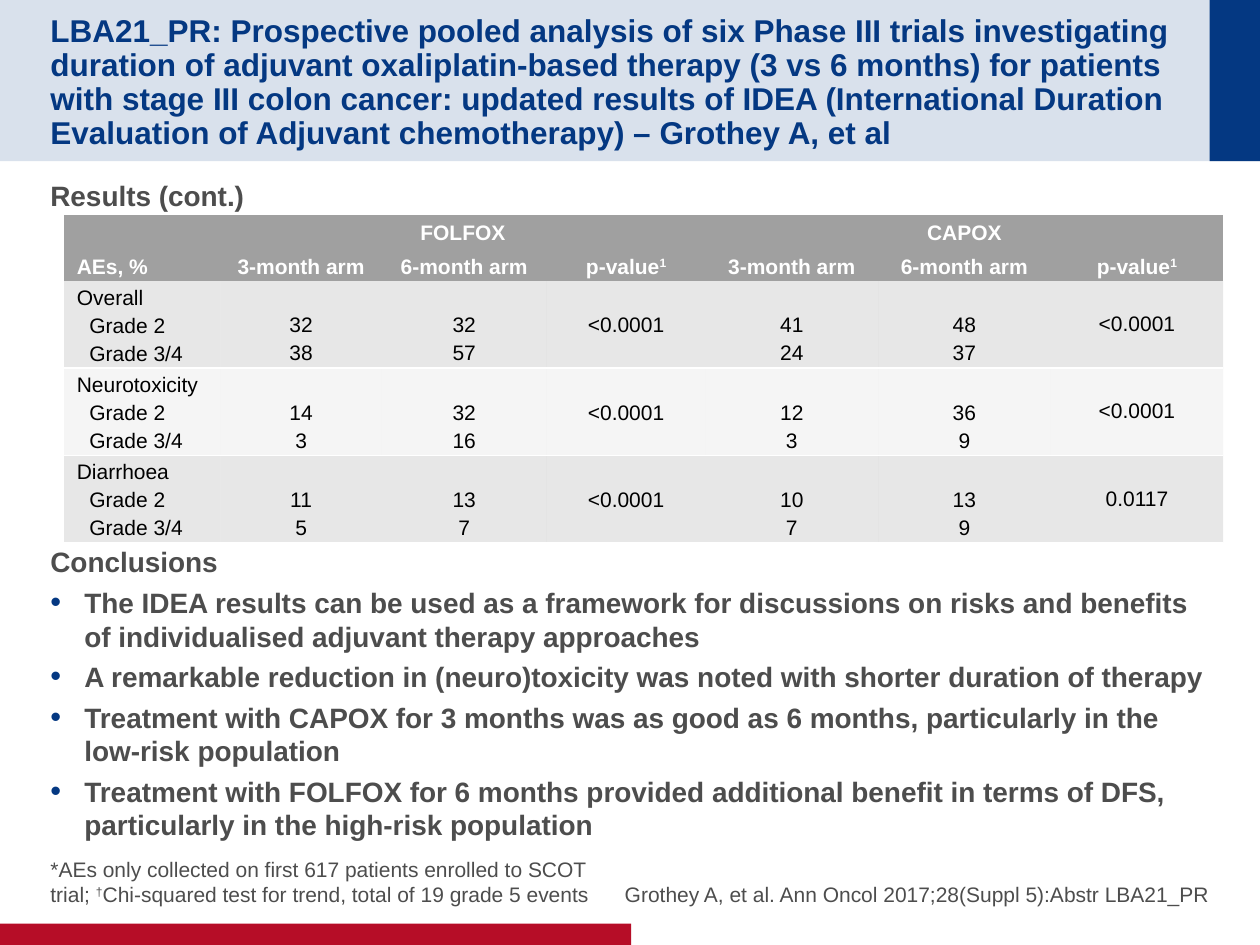
from lxml import etree
from pptx import Presentation
from pptx.dml.color import RGBColor
from pptx.enum.shapes import MSO_SHAPE as SHAPE
from pptx.enum.text import MSO_ANCHOR as ANCHOR, PP_ALIGN as ALIGN
from pptx.oxml import parse_xml
from pptx.oxml.ns import nsdecls, qn
from pptx.util import Inches, Pt

NAVY, RED, TEXT, GREY = "043882", "B60D27", "4D4D4D", "A0A0A0"
WHITE, BLACK = "FFFFFF", "000000"
PLAIN_TABLE = "{2D5ABB26-0587-4C30-8999-92F81FD0307C}"


def rgb(color):
    return RGBColor.from_string(color)


def set_fill(fill, color, opacity=100):
    fill.solid()
    fill.fore_color.rgb = rgb(color)
    if opacity < 100:
        clr = fill._xPr.find(qn("a:solidFill"))[0]
        etree.SubElement(clr, qn("a:alpha")).set("val", str(opacity * 1000))


def write(p, text, size=12, color=TEXT, bold=False, align=ALIGN.LEFT,
          line=None, before=0, after=0, indent=0, bullet=False):
    """Fill a paragraph; text between carets is superscript."""
    p.alignment = align
    p.space_before, p.space_after = Pt(before), Pt(after)
    if line:
        p.line_spacing = line
    pPr = p._p.get_or_add_pPr()
    pPr.set("marL", str(Inches(indent)))
    pPr.set("indent", str(Inches(-indent if bullet else 0)))
    if bullet:
        for xml in (f'<a:buClr {nsdecls("a")}><a:srgbClr val="{NAVY}"/></a:buClr>',
                    f'<a:buSzPct {nsdecls("a")} val="110000"/>',
                    f'<a:buFont {nsdecls("a")} typeface="Arial"/>',
                    f'<a:buChar {nsdecls("a")} char="•"/>'):
            pPr.append(parse_xml(xml))
    for i, part in enumerate(text.split("^")):
        if part:
            r = p.add_run()
            r.text = part
            f = r.font
            f.name, f.size, f.bold = "Arial", Pt(size), bold
            f.color.rgb = rgb(color)
            if i % 2:
                r._r.get_or_add_rPr().set("baseline", "30000")


def write_all(tf, paragraphs, **fmt):
    """Write (text, format) pairs, one paragraph each."""
    for i, (text, own) in enumerate(paragraphs):
        p = tf.add_paragraph() if i else tf.paragraphs[0]
        write(p, text, **{**fmt, **own})


class SlideBuilder:
    def __init__(self, slide):
        self.s = slide

    def bar(self, x, y, w, h, color, opacity=100):
        sp = self.s.shapes.add_shape(SHAPE.RECTANGLE, Inches(x), Inches(y), Inches(w), Inches(h))
        sp.shadow.inherit = False
        sp.line.fill.background()
        set_fill(sp.fill, color, opacity)

    def text(self, x, y, w, h, paragraphs, anchor=ANCHOR.TOP, top=0, bottom=0, **fmt):
        tf = self.s.shapes.add_textbox(Inches(x), Inches(y), Inches(w), Inches(h)).text_frame
        tf.word_wrap = True
        tf.vertical_anchor = anchor
        tf.margin_left = tf.margin_right = 0
        tf.margin_top, tf.margin_bottom = Inches(top), Inches(bottom)
        write_all(tf, paragraphs, **fmt)

    def table(self, x, y, widths, heights):
        frame = self.s.shapes.add_table(len(heights), len(widths), Inches(x), Inches(y),
                                        Inches(sum(widths)), Inches(sum(heights)))
        table = frame.table
        table.first_row = table.horz_banding = False
        table._tbl.tblPr.find(qn("a:tableStyleId")).text = PLAIN_TABLE
        for col, w in zip(table.columns, widths):
            col.width = Inches(w)
        for row, h in zip(table.rows, heights):
            row.height = Inches(h)
        return table

    def cell(self, cell, paragraphs, opacity=100, anchor=ANCHOR.TOP, top=0.02, rules=(), **fmt):
        cell.vertical_anchor = anchor
        cell.margin_left = cell.margin_right = Inches(0.1)
        cell.margin_top, cell.margin_bottom = Inches(top), Inches(0.02)
        set_fill(cell.fill, GREY, opacity)
        for i, side in enumerate(rules):
            cell._tc.tcPr.insert(i, parse_xml(
                f'<a:{side} {nsdecls("a")} w="12700"><a:solidFill>'
                f'<a:srgbClr val="{WHITE}"/></a:solidFill></a:{side}>'))
        write_all(cell.text_frame, paragraphs, line=Pt(15), **fmt)


ARMS = ["3-month arm", "6-month arm", "p-value^1^"]
EVENTS = [
    ("Overall", [("32", "38"), ("32", "57"), ("<0.0001",), ("41", "24"), ("48", "37"), ("<0.0001",)]),
    ("Neurotoxicity", [("14", "3"), ("32", "16"), ("<0.0001",), ("12", "3"), ("36", "9"), ("<0.0001",)]),
    ("Diarrhoea", [("11", "5"), ("13", "7"), ("<0.0001",), ("10", "7"), ("13", "9"), ("0.0117",)]),
]
CONCLUSIONS = [
    "The IDEA results can be used as a framework for discussions on risks and benefits "
    "of individualised adjuvant therapy approaches",
    "A remarkable reduction in (neuro)toxicity was noted with shorter duration of therapy",
    "Treatment with CAPOX for 3 months was as good as 6 months, particularly in the "
    "low-risk population",
    "Treatment with FOLFOX for 6 months provided additional benefit in terms of DFS, "
    "particularly in the high-risk population",
]
TITLE = ("LBA21_PR: Prospective pooled analysis of six Phase III trials investigating duration "
         "of adjuvant oxaliplatin-based therapy (3 vs 6 months) for patients with stage III "
         "colon cancer: updated results of IDEA (International Duration Evaluation of Adjuvant "
         "chemotherapy) – Grothey A, et al")
FOOTNOTE = ("*AEs only collected on first 617 patients enrolled to SCOT trial; "
            "^†^Chi-squared test for trend, total of 19 grade 5 events")


def add_adverse_events(b):
    table = b.table(0.51, 1.71, [1.24, 1.28, 1.31, 1.26, 1.37, 1.37, 1.37],
                    [0.25, 0.27] + [0.69] * len(EVENTS))
    head = dict(anchor=ANCHOR.BOTTOM, color=WHITE, bold=True)
    table.cell(0, 0).merge(table.cell(1, 0))
    b.cell(table.cell(0, 0), [("AEs, %", {})], **head)
    for c, regimen in ((1, "FOLFOX"), (4, "CAPOX")):
        table.cell(0, c).merge(table.cell(0, c + 2))
        b.cell(table.cell(0, c), [(regimen, {})], align=ALIGN.CENTER, **head)
    for c, arm in enumerate(ARMS * 2, 1):
        b.cell(table.cell(1, c), [(arm, {})], align=ALIGN.CENTER, **head)

    for i, (event, values) in enumerate(EVENTS):
        row = i + 2
        look = dict(opacity=10 if i % 2 else 25, color=BLACK, before=1,
                    rules=("lnT", "lnB") if i else ("lnB",))
        grades = [(g, dict(indent=0.1)) for g in ("Grade 2", "Grade 3/4")]
        b.cell(table.cell(row, 0), [(event, {})] + grades, **look)
        for c, numbers in enumerate(values, 1):
            top = 0.23 if c == len(values) else 0.24  # leaves the event's line free
            b.cell(table.cell(row, c), [(n, {}) for n in numbers],
                   top=top, align=ALIGN.CENTER, **look)


def main():
    prs = Presentation()
    prs.slide_width, prs.slide_height = Inches(10), Inches(7.5)
    b = SlideBuilder(prs.slides.add_slide(prs.slide_layouts[6]))
    b.bar(0, 0, 10, 1.28, NAVY, opacity=15)
    b.bar(9.6, 0, 0.4, 1.28, NAVY)
    b.bar(0, 7.33, 5.01, 0.17, RED)
    b.text(0.4, 0.2, 9.01, 0.88, [(TITLE, {})], anchor=ANCHOR.MIDDLE, top=0.05,
           size=18, color=NAVY, bold=True, line=0.9)
    bullets = [(t, dict(indent=0.27, bullet=True)) for t in CONCLUSIONS]
    b.text(0.4, 1.37, 9.2, 5.19,
           [("Results (cont.)", {}), ("Conclusions", dict(before=186))] + bullets,
           top=0.05, bottom=0.05, size=16, bold=True, after=4)
    b.text(0.4, 6.67, 4.52, 0.53, [(FOOTNOTE, {})], anchor=ANCHOR.BOTTOM)
    b.text(4.87, 6.67, 4.73, 0.53,
           [("Grothey A, et al. Ann Oncol 2017;28(Suppl 5):Abstr LBA21_PR", {})],
           anchor=ANCHOR.BOTTOM, align=ALIGN.RIGHT)
    add_adverse_events(b)
    prs.save("out.pptx")


if __name__ == "__main__":
    main()
